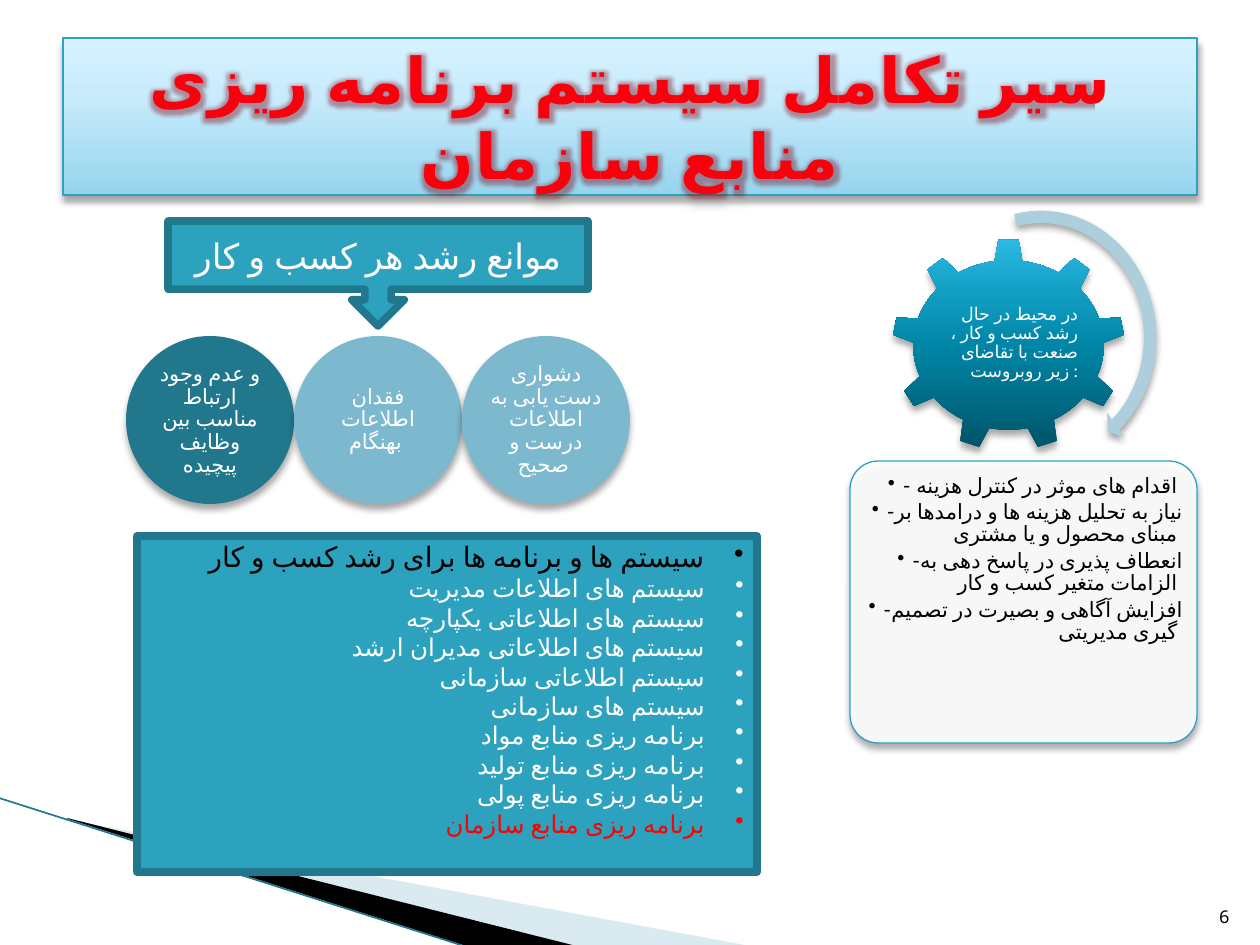
import pptx
import pptx.util
import pptx.dml.color
import pptx.enum.lang
import pptx.enum.shapes
import pptx.enum.text
import pptx.oxml
import pptx.oxml.ns

KIND = pptx.enum.shapes.MSO_SHAPE
ALIGN = pptx.enum.text.PP_ALIGN
ANCHOR = pptx.enum.text.MSO_ANCHOR
FARSI = pptx.enum.lang.MSO_LANGUAGE_ID.FARSI
UNIT = 914400 / 126
FONT = "Lato"
HUES = {
    "white": "FFFFFF", "black": "000000", "red": "FF0000", "title": "F9000C",
    "glow": "7A0010", "teal": "2DA2BF", "deep": "21788D", "mid": "7DB9CE",
    "pale": "A0CBDC", "arc": "ADCEDC",
}
SKY = [(0, "96D4EE"), (65, "C9ECFC"), (100, "D7F2FF")]
SEA = [(0, "005367"), (50, "0086A7"), (70, "0E9ABE"), (100, "2CB9E3")]

TITLE = "سیر تکامل سیستم برنامه ریزی منابع سازمان"
GEAR = " در محیط در حال رشد کسب و کار ، صنعت با تقاضای زیر روبروست :"
NEEDS = [
    "- اقدام های موثر در کنترل هزینه ",
    "-نیاز به تحلیل هزینه ها و درامدها بر مبنای محصول و یا مشتری ",
    "-انعطاف پذیری در پاسخ دهی به الزامات متغیر کسب و کار ",
    "-افزایش آگاهی و بصیرت در تصمیم گیری مدیریتی ",
]
LIMITS = [
    ("و عدم وجود ارتباط مناسب بین وظایف پیچیده", "deep"),
    ("فقدان اطلاعات بهنگام ", "mid"),
    ("دشواری دست یابی به اطلاعات درست و صحیح ", "mid"),
]
BANNER = "موانع رشد هر کسب و کار"
HEAD = "سیستم ها و برنامه ها برای رشد کسب و کار"
PLANS = [
    "سیستم های اطلاعات مدیریت",
    "سیستم های اطلاعاتی یکپارچه",
    "سیستم های اطلاعاتی مدیران ارشد",
    "سیستم اطلاعاتی سازمانی",
    "سیستم های سازمانی",
    "برنامه ریزی منابع مواد",
    "برنامه ریزی منابع تولید",
    "برنامه ریزی منابع پولی",
]
LAST = "برنامه ریزی منابع سازمان"
WEDGES = [
    ([(69, 820), (750, 946), (575, 946), (69, 819)], "pale", 40),
    ([(67, 818), (576, 946), (469, 947), (68, 819)], "black", 100),
]


def px(n):
    return pptx.util.Emu(round(n * UNIT))


def rgb(name):
    return pptx.dml.color.RGBColor.from_string(HUES[name])


def node(xml):
    space = pptx.oxml.ns.nsdecls("a")
    return pptx.oxml.parse_xml(xml.replace(">", f" {space}>", 1))


def fade(shape, part):
    hue = shape._element.spPr.find(".//" + pptx.oxml.ns.qn("a:srgbClr"))
    hue.append(node(f'<a:alpha val="{part * 1000}"></a:alpha>'))


def shade(shape):
    shape.shadow.inherit = False
    fx = shape._element.spPr.find(pptx.oxml.ns.qn("a:effectLst"))
    fx.append(node(
        '<a:outerShdw blurRad="50800" dist="38100" dir="5400000" rotWithShape="0">'
        f'<a:srgbClr val="{HUES["black"]}"><a:alpha val="35000"/></a:srgbClr></a:outerShdw>'))


def blend(shape, stops):
    shape.fill.gradient()
    shape.fill.gradient_angle = 90
    grad = shape._element.spPr.find(pptx.oxml.ns.qn("a:gradFill"))
    old = grad.find(pptx.oxml.ns.qn("a:gsLst"))
    marks = "".join(
        f'<a:gs pos="{at * 1000}"><a:srgbClr val="{hue}"/></a:gs>' for at, hue in stops)
    grad.replace(old, node(f"<a:gsLst>{marks}</a:gsLst>"))


def draw(kind, box, fill, line=None, width=0.75, cast=True):
    shape = page.shapes.add_shape(kind, *map(px, box))
    shape.shadow.inherit = False
    if isinstance(fill, list):
        blend(shape, fill)
    else:
        shape.fill.solid()
        shape.fill.fore_color.rgb = rgb(fill)
    if line:
        shape.line.color.rgb = rgb(line)
        shape.line.width = pptx.util.Pt(width)
    else:
        shape.line.fill.background()
    if cast:
        shade(shape)
    return shape


def label(box):
    return page.shapes.add_textbox(*map(px, box))


def write(shape, rows, align, anchor=ANCHOR.MIDDLE, pads=None, rtl=False,
          dent=0, lead=None, after=0, font=FONT):
    frame = shape.text_frame
    frame.word_wrap = True
    frame.vertical_anchor = anchor
    if pads:
        (frame.margin_left, frame.margin_top,
         frame.margin_right, frame.margin_bottom) = map(px, pads)
    for i, (text, size, hue) in enumerate(rows):
        para = frame.add_paragraph() if i else frame.paragraphs[0]
        para.alignment = align
        if lead:
            para.line_spacing = lead
        if after:
            para.space_after = pptx.util.Pt(after)
        props = para._p.get_or_add_pPr()
        if rtl:
            props.set("rtl", "1")
        if dent:
            props.set("marL", str(px(dent)))
            props.set("indent", str(-px(dent)))
            props.append(node('<a:buChar char="•"></a:buChar>'))
        run = para.add_run()
        run.text = text
        run.font.size = pptx.util.Pt(size)
        run.font.name = font
        run.font.language_id = FARSI
        run.font.color.rgb = rgb(hue)
        run._r.get_or_add_rPr().append(node(f'<a:cs typeface="{font}"></a:cs>'))


deck = pptx.Presentation()
deck.slide_width, deck.slide_height = px(1260), px(945)
page = deck.slides.add_slide(deck.slide_layouts[6])

for dots, hue, part in WEDGES:
    path = page.shapes.build_freeform(*dots[0], scale=UNIT)
    path.add_line_segments(dots[1:], close=True)
    wedge = path.convert_to_shape()
    wedge.shadow.inherit = False
    wedge.fill.solid()
    wedge.fill.fore_color.rgb = rgb(hue)
    wedge.line.fill.background()
    if part < 100:
        fade(wedge, part)

edge = page.shapes.add_connector(
    pptx.enum.shapes.MSO_CONNECTOR.STRAIGHT, px(-1), px(798), px(467), px(947))
edge.line.color.rgb = rgb("deep")
edge.line.width = pptx.util.Pt(0.95)
edge._element.spPr.append(node("<a:effectLst></a:effectLst>"))

draw(KIND.GEAR_9, (892, 239, 233, 212), SEA)
write(label((937, 289, 142, 108)), [(GEAR, 10, "white")], ALIGN.RIGHT,
      pads=(1, 1, 1, 1), lead=0.9)

card = draw(KIND.ROUNDED_RECTANGLE, (850, 461, 347, 282), "white", "teal")
card.adjustments[0] = 0.1
fade(card, 90)
write(label((859, 469, 330, 266)), [(t, 12, "black") for t in NEEDS], ALIGN.RIGHT,
      ANCHOR.TOP, (6, 6, 6, 6), dent=15, lead=0.9, after=2)

arc = draw(KIND.CIRCULAR_ARROW, (917, 202, 248, 270), "arc")
for i, turn in enumerate((0.05, 3.13, 29.76, 154.65, 0.06)):
    arc.adjustments[i] = turn

write(label((1192, 883, 50, 50)), [("6", 10, "black")], ALIGN.RIGHT,
      ANCHOR.BOTTOM, font="Noto Sans Mono")

top = draw(KIND.RECTANGLE, (63, 38, 1134, 157), SKY, "teal")
write(top, [(TITLE, 36, "title")], ALIGN.CENTER, rtl=True)
run = top.text_frame.paragraphs[0].runs[0]
run.font.bold = True
props = run._r.get_or_add_rPr()
props.set("spc", "50")
props.insert(1, node(
    f'<a:effectLst><a:glow rad="139700"><a:srgbClr val="{HUES["glow"]}">'
    '<a:alpha val="40000"/></a:srgbClr></a:glow></a:effectLst>'))

for i, (text, hue) in enumerate(LIMITS):
    left = 126 + 168 * i
    draw(KIND.OVAL, (left, 336, 168, 168), hue)
    write(label((left + 25, 361, 118, 118)), [(text, 12, "white")], ALIGN.CENTER,
          pads=(0, 0, 0, 0), lead=0.9)

sign = draw(KIND.DOWN_ARROW_CALLOUT, (168, 221, 420, 105), "teal", "deep", 4.33, False)
write(sign, [(BANNER, 20, "white")], ALIGN.CENTER)

plan = draw(KIND.FLOWCHART_PROCESS, (137, 536, 620, 336), "teal", "deep", 4.33, False)
rows = [(HEAD, 16, "black")] + [(t, 14, "white") for t in PLANS] + [(LAST, 14, "red")]
write(plan, rows, ALIGN.RIGHT, pads=(13, 6, 13, 36), rtl=True, dent=39)

deck.save("out.pptx")
